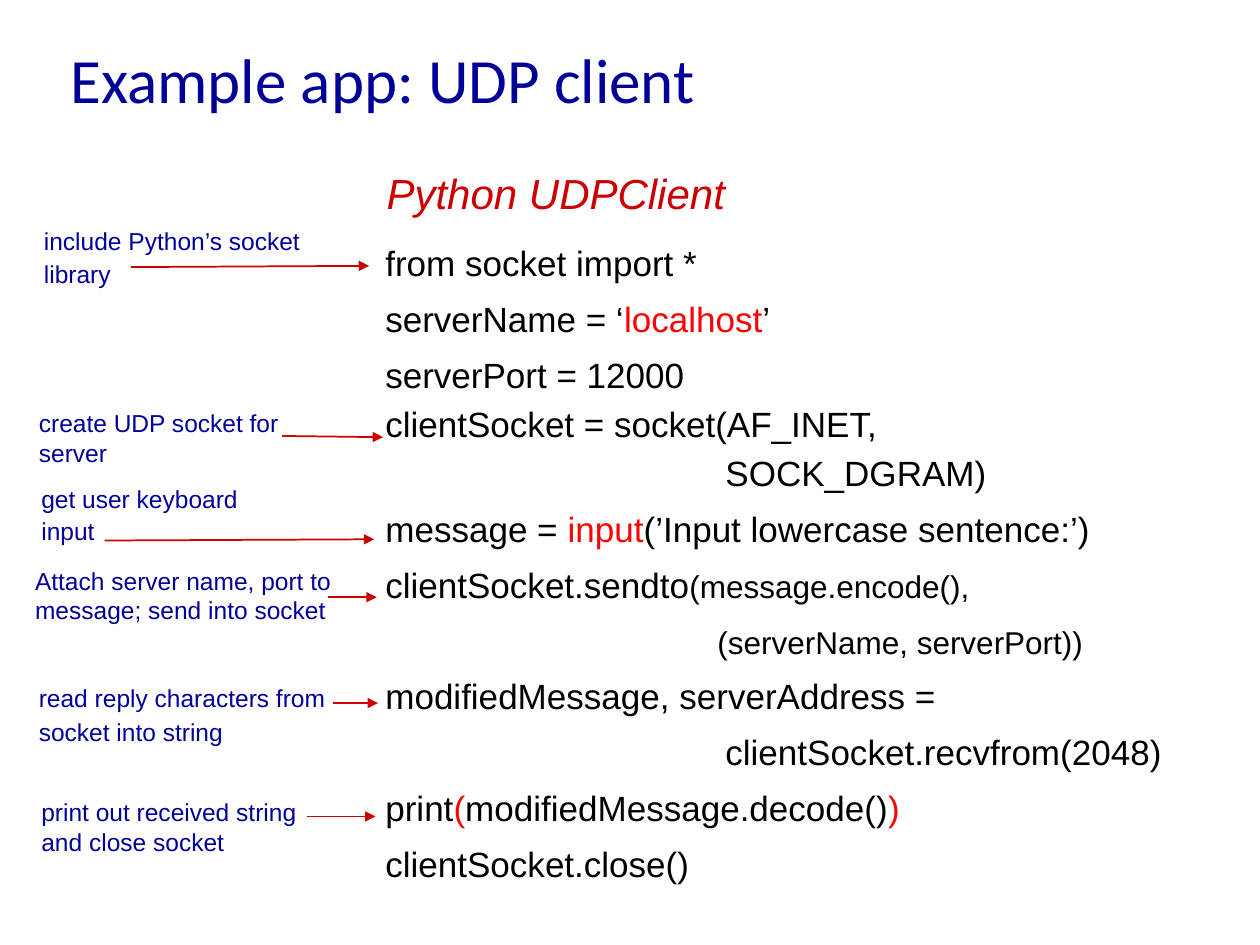
from dataclasses import dataclass
from typing import Optional

from lxml import etree
from pptx import Presentation, util as u
from pptx.dml.color import RGBColor
from pptx.enum import shapes, text
from pptx.oxml import ns

COLUMNS, ROWS = 100, 75


@dataclass(frozen=True)
class Theme:
    title_font: str = "Calibri"
    body_font: str = "Arial"
    navy: str = "000099"
    crimson: str = "CC0000"
    red: str = "FF0000"
    black: str = "000000"
    title: int = 36
    heading: int = 24
    code: int = 20
    small_code: int = 18
    note: int = 14
    line: float = 1


@dataclass(frozen=True)
class Run:
    words: str
    color: str = Theme.black
    size: int = Theme.code


@dataclass(frozen=True)
class CodeLine:
    runs: tuple
    pitch: int = 28


@dataclass(frozen=True)
class Note:
    box: tuple
    lines: tuple
    start: tuple
    end: tuple
    pitch: Optional[int] = None
    wrap: bool = True


T = Theme()

CODE = (
    CodeLine((Run("from socket import *"),)),
    CodeLine((Run("serverName = ‘"), Run("localhost", T.red), Run("’"))),
    CodeLine((Run("serverPort = 12000"),)),
    CodeLine((Run("clientSocket = socket(AF_INET,"),), 24),
    CodeLine((Run("                                   SOCK_DGRAM)"),), 24),
    CodeLine((Run("message = "), Run("input", T.red), Run("(’Input lowercase sentence:’)"))),
    CodeLine((Run("clientSocket.sendto"), Run("(message.encode(),", size=T.small_code))),
    CodeLine((Run("                                      (serverName, serverPort))",
                  size=T.small_code),)),
    CodeLine((Run("modifiedMessage, serverAddress ="),)),
    CodeLine((Run("                                   clientSocket.recvfrom(2048)"),)),
    CodeLine((Run("print"), Run("(", T.red), Run("modifiedMessage.decode()"), Run(")", T.red))),
    CodeLine((Run("clientSocket.close()"),)),
)

NOTES = (
    Note((2.5, 17.6, 22.5, 6), ("include Python’s socket", "library"),
         (10.4, 21.2), (29.3, 21.1), 16, False),
    Note((2.1, 31.9, 24.8, 5.7), ("create UDP socket for server",),
         (22.4, 34.6), (30.4, 34.7)),
    Note((2.3, 38, 17.7, 6), ("get user keyboard", "input"),
         (8.3, 42.9), (29.7, 42.8), 16, False),
    Note((1.8, 44.4, 25.7, 5.7), ("Attach server name, port to message; send into socket",),
         (26, 47.4), (29.9, 47.4)),
    Note((2.1, 53.7, 25.7, 6.2), ("read reply characters from", "socket into string"),
         (26.4, 55.8), (30, 55.8)),
    Note((2.3, 62.8, 25.7, 5.7), ("print out received string and close socket",),
         (24.4, 64.8), (29.8, 64.8)),
)


def place(prs, *cells: float) -> list:
    units = (prs.slide_width / COLUMNS, prs.slide_height / ROWS)
    return [u.Emu(round(cell * units[i % 2])) for i, cell in enumerate(cells)]


def add_run(p, words: str, *, size: int, color: str, font: str = T.body_font,
            italic: bool = False) -> None:
    r = p.add_run()
    r.text = words
    r.font.name = font
    r.font.size = u.Pt(size)
    r.font.color.rgb = RGBColor.from_string(color)
    r.font.italic = italic


def add_box(prs, s, cells: tuple, lines: tuple, *, wrap: bool = False,
            italic: bool = False) -> None:
    tf = s.shapes.add_textbox(*place(prs, *cells)).text_frame
    tf.word_wrap = wrap
    tf.auto_size = text.MSO_AUTO_SIZE.SHAPE_TO_FIT_TEXT
    for i, line in enumerate(lines):
        p = tf.add_paragraph() if i else tf.paragraphs[0]
        if i:
            p.space_before = u.Pt(line.runs[0].size * 0.2)
        if line.pitch:
            p.line_spacing = u.Pt(line.pitch)
        for run in line.runs:
            add_run(p, run.words, size=run.size, color=run.color, italic=italic)


def add_arrow(prs, s, start: tuple, end: tuple) -> None:
    sp = s.shapes.add_connector(shapes.MSO_CONNECTOR.STRAIGHT, *place(prs, *start, *end))
    sp.line.color.rgb = RGBColor.from_string(T.crimson)
    sp.line.width = u.Pt(T.line)
    etree.SubElement(sp.line._get_or_add_ln(), ns.qn("a:tailEnd"), type="triangle")
    etree.SubElement(sp._element.spPr, ns.qn("a:effectLst"))


def add_note(prs, s, note: Note) -> None:
    lines = tuple(CodeLine((Run(words, T.navy, T.note),), note.pitch) for words in note.lines)
    add_box(prs, s, note.box, lines, wrap=note.wrap)
    add_arrow(prs, s, note.start, note.end)


def set_title(prs, s, words: str) -> None:
    sp = s.shapes.title
    sp.left, sp.top, sp.width, sp.height = place(prs, 4.6, 1, 85, 10.4)
    tf = sp.text_frame
    tf.auto_size = text.MSO_AUTO_SIZE.NONE
    tf.vertical_anchor = text.MSO_ANCHOR.MIDDLE
    p = tf.paragraphs[0]
    p.alignment = text.PP_ALIGN.LEFT
    add_run(p, words, size=T.title, color=T.navy, font=T.title_font)


def main() -> None:
    prs = Presentation()
    prs.slide_width, prs.slide_height = u.Inches(10), u.Inches(7.5)
    s = prs.slides.add_slide(prs.slide_layouts.get_by_name("Title Only"))
    set_title(prs, s, "Example app: UDP client")
    add_box(prs, s, (29.6, 18.1, 64.5, 54.3), CODE)
    heading = CodeLine((Run("Python UDPClient", T.crimson, T.heading),), None)
    add_box(prs, s, (29.7, 12.8, 30, 5.1), (heading,), italic=True)
    for note in NOTES:
        add_note(prs, s, note)
    prs.save("out.pptx")


if __name__ == "__main__":
    main()
